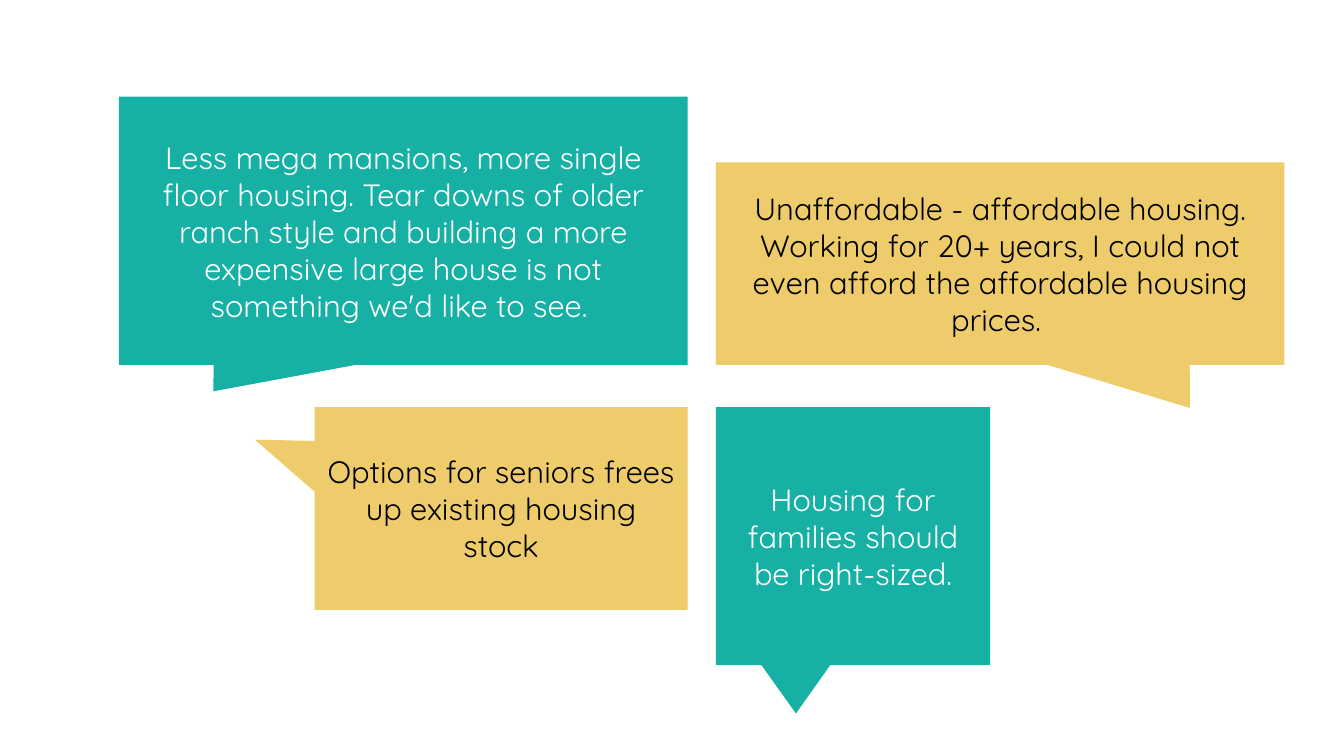
from dataclasses import dataclass

from pptx import Presentation
from pptx.dml.color import RGBColor
from pptx.enum.shapes import MSO_SHAPE as Shape
from pptx.enum.text import MSO_ANCHOR as Anchor, PP_ALIGN as Align
from pptx.shapes.autoshape import Shape as AutoShape
from pptx.slide import Slide
from pptx.util import Inches, Pt

TEAL = RGBColor(0x16, 0xB0, 0xA4)
YELLOW = RGBColor(0xEF, 0xCC, 0x6B)
WHITE = RGBColor(0xFF, 0xFF, 0xFF)
BLACK = RGBColor(0x00, 0x00, 0x00)

# Grid of tenths of an inch; every bubble has one corner on the central gutter
CELL = 0.1
GUTTER_LEFT, GUTTER_RIGHT = 68.2, 71
GUTTER_TOP, GUTTER_BOTTOM = 36.2, 40.4
WIDE, SHORT = 56.4, 20.1


@dataclass(frozen=True)
class Bubble:
    text: str
    columns: float
    rows: float
    on_left: bool
    on_top: bool
    tail: tuple[float, float]

    @property
    def column(self) -> float:
        return GUTTER_LEFT - self.columns if self.on_left else GUTTER_RIGHT

    @property
    def row(self) -> float:
        return GUTTER_TOP - self.rows if self.on_top else GUTTER_BOTTOM

    @property
    def colors(self) -> tuple[RGBColor, RGBColor]:
        """Fill and text colours alternate like a checkerboard."""
        return (TEAL, WHITE) if self.on_left == self.on_top else (YELLOW, BLACK)


BUBBLES = [
    Bubble("Less mega mansions, more single floor housing. Tear downs of older "
           "ranch style and building a more expensive large house is not "
           "something we'd like to see. ",
           WIDE, 26.6, True, True, (-0.334, 0.599)),
    Bubble("Unaffordable - affordable housing. Working for 20+ years, I could "
           "not even afford the affordable housing prices. ",
           WIDE, SHORT, False, True, (0.334, 0.713)),
    Bubble("Options for seniors frees up existing housing stock",
           37, SHORT, True, False, (-0.66, -0.34)),
    Bubble("Housing for families should be right-sized.",
           27.2, 25.6, False, False, (-0.208, 0.687)),
]


def write_text(shape: AutoShape, text: str, *, color: RGBColor,
               size: float = 22, font: str = "Quicksand") -> None:
    frame = shape.text_frame
    frame.word_wrap = True
    frame.vertical_anchor = Anchor.MIDDLE
    paragraph = frame.paragraphs[0]
    paragraph.alignment = Align.CENTER
    run = paragraph.add_run()
    run.text = text
    run.font.name = font
    run.font.size = Pt(size)
    run.font.color.rgb = color


def draw_bubble(slide: Slide, bubble: Bubble) -> None:
    position = (Inches(cells * CELL) for cells in
                (bubble.column, bubble.row, bubble.columns, bubble.rows))
    shape = slide.shapes.add_shape(Shape.RECTANGULAR_CALLOUT, *position)
    shape.adjustments[0], shape.adjustments[1] = bubble.tail
    fill_color, text_color = bubble.colors
    shape.shadow.inherit = False
    shape.fill.solid()
    shape.fill.fore_color.rgb = fill_color
    shape.line.fill.background()
    write_text(shape, bubble.text, color=text_color)


def main() -> None:
    presentation = Presentation()
    presentation.slide_width = Inches(13.33)
    presentation.slide_height = Inches(7.5)
    slide = presentation.slides.add_slide(presentation.slide_layouts[6])

    # Speech bubbles around the gutter
    for bubble in BUBBLES:
        draw_bubble(slide, bubble)

    presentation.save("out.pptx")


if __name__ == "__main__":
    main()
